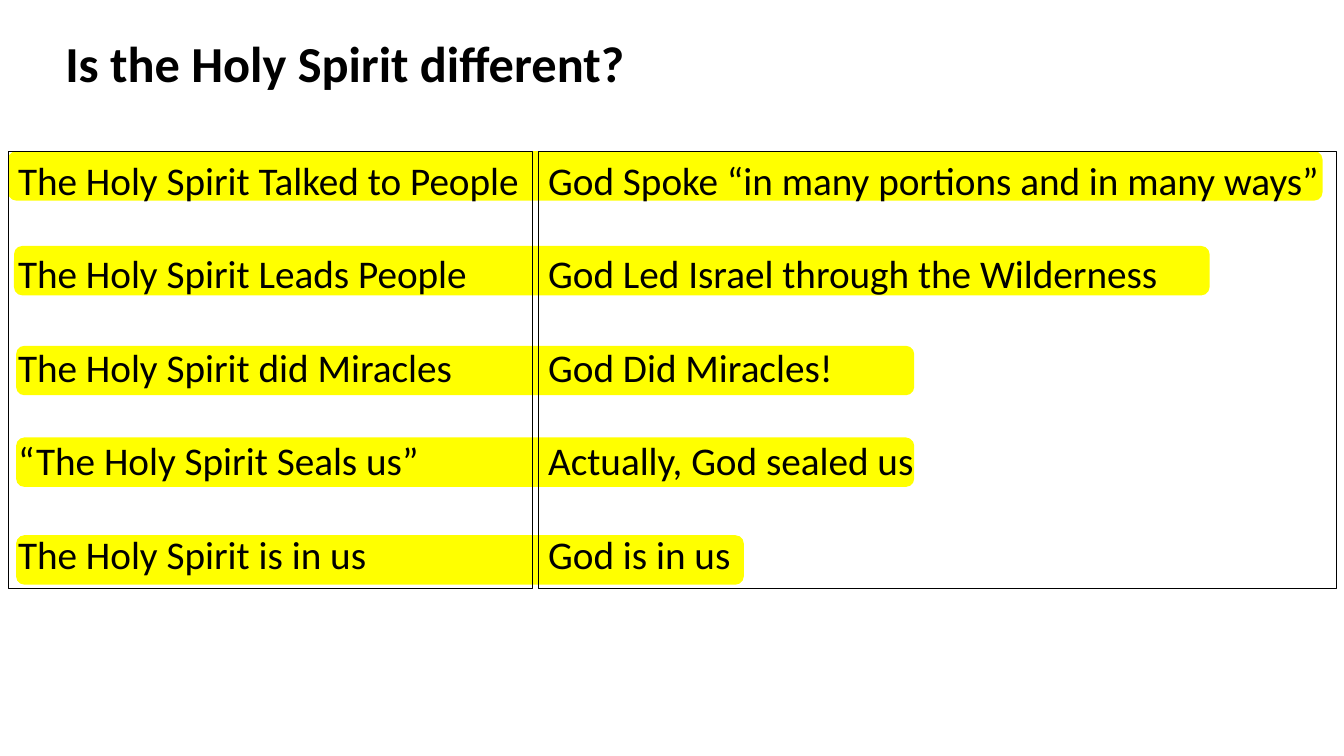
from dataclasses import dataclass

from pptx import Presentation
from pptx.dml.color import RGBColor
from pptx.enum.shapes import MSO_SHAPE
from pptx.enum.text import MSO_ANCHOR, PP_ALIGN
from pptx.util import Pt


@dataclass
class Theme:
    font: str = "Calibri"
    ink: RGBColor = RGBColor(0, 0, 0)
    marker: RGBColor = RGBColor(255, 255, 0)
    title_size: Pt = Pt(36)
    body_size: Pt = Pt(28)


theme = Theme()


def style_text(p, size, bold=False):
    p.alignment = PP_ALIGN.LEFT
    for r in p.runs:
        r.font.name = theme.font
        r.font.size = size
        r.font.bold = bold
        r.font.color.rgb = theme.ink


prs = Presentation()
prs.slide_width, prs.slide_height = Pt(960), Pt(540)
s = prs.slides.add_slide(prs.slide_layouts[6])

# Highlighter bars behind each pair of statements: left, top, width
bars = [
    (11.5, 382.3, 519.8),
    (11.5, 312.5, 641.5),
    (11.5, 247, 641.5),
    (10, 175.7, 854),
    (5.8, 108, 938.9),
]
for left, top, width in bars:
    sp = s.shapes.add_shape(MSO_SHAPE.ROUNDED_RECTANGLE,
                            Pt(left), Pt(top), Pt(width), Pt(35.3))
    sp.shadow.inherit = False
    sp.fill.solid()
    sp.fill.fore_color.rgb = theme.marker
    sp.line.fill.background()

# Title
title = s.shapes.add_textbox(Pt(39.6), Pt(19.4), Pt(585.4), Pt(51))
title.text_frame.word_wrap = True
title.text_frame.text = "Is the Holy Spirit different?"
style_text(title.text_frame.paragraphs[0], theme.title_size, bold=True)

# Two outlined columns of statements
columns = [
    (5.8, 374.4, [
        "The Holy Spirit Talked to People",
        "The Holy Spirit Leads People",
        "The Holy Spirit did Miracles",
        "“The Holy Spirit Seals us”",
        "The Holy Spirit is in us",
    ]),
    (384.5, 570.2, [
        "God Spoke “in many portions and in many ways”",
        "God Led Israel through the Wilderness",
        "God Did Miracles!",
        "Actually, God sealed us",
        "God is in us",
    ]),
]
for left, width, statements in columns:
    sp = s.shapes.add_shape(MSO_SHAPE.RECTANGLE,
                            Pt(left), Pt(108), Pt(width), Pt(312.5))
    sp.shadow.inherit = False
    sp.fill.background()
    sp.line.color.rgb = theme.ink
    sp.line.width = Pt(0.75)
    tf = sp.text_frame
    tf.word_wrap = True
    tf.vertical_anchor = MSO_ANCHOR.TOP
    for i, statement in enumerate(statements):
        p = tf.paragraphs[0] if i == 0 else tf.add_paragraph()
        p.text = statement
        p.space_before = Pt(33.2 if i else 0)
        style_text(p, theme.body_size)

prs.save("out.pptx")
